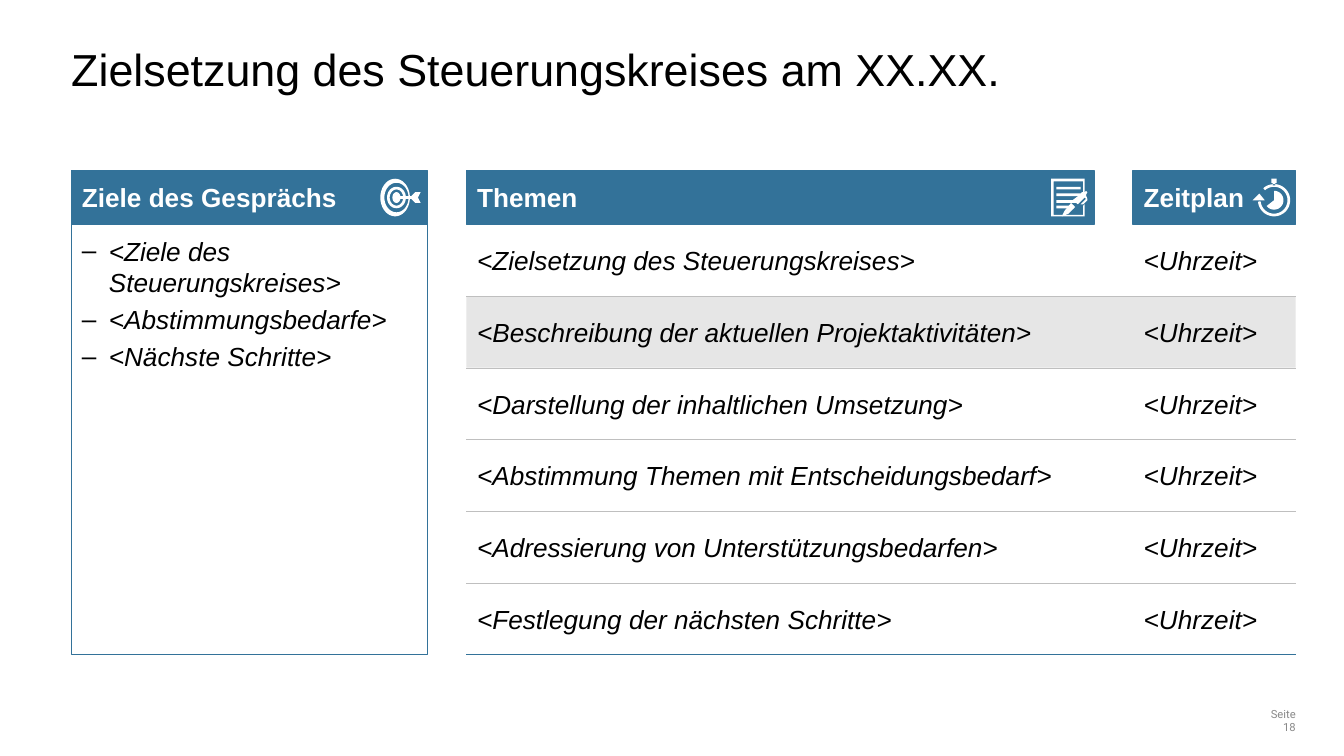
from math import cos, radians, sin

from pptx import Presentation
from pptx.dml.color import RGBColor
from pptx.enum.shapes import MSO_CONNECTOR, MSO_SHAPE
from pptx.enum.text import MSO_ANCHOR, PP_ALIGN
from pptx.oxml.xmlchemy import OxmlElement
from pptx.util import Inches, Pt

BLUE, WHITE, BLACK = "337299", "FFFFFF", "000000"
GREY, BAND, RULE = "898989", "E6E6E6", "BFBFBF"


def paint(target, color):
    target.rgb = RGBColor.from_string(color)


def arc(center, radii, start=0, end=360, steps=48):
    angles = [radians(start + (end - start) * step / steps) for step in range(steps + 1)]
    return [(center[0] + radii[0] * cos(angle), center[1] + radii[1] * sin(angle))
            for angle in angles]


def bar(left, top, width, height):
    right, bottom = left + width, top + height
    return [(left, top), (right, top), (right, bottom), (left, bottom)]


def add_dash(para):
    properties = para._p.get_or_add_pPr()
    properties.set("marL", str(Inches(0.2)))
    properties.set("indent", str(-Inches(0.2)))
    for tag, name, value in (("a:buFont", "typeface", "Arial"), ("a:buChar", "char", "–")):
        element = OxmlElement(tag)
        element.set(name, value)
        properties.append(element)


def write(box, text, size=14, font="Arial", color=BLACK, bold=False, italic=False,
          align=PP_ALIGN.LEFT, anchor=MSO_ANCHOR.MIDDLE, insets=(0.08, 0), dashed=False):
    frame = box.text_frame
    frame.word_wrap = True
    frame.vertical_anchor = anchor
    frame.margin_left = frame.margin_right = Inches(insets[0])
    frame.margin_top = frame.margin_bottom = Inches(insets[1])
    for index, line in enumerate(text.split("\n")):
        para = frame.add_paragraph() if index else frame.paragraphs[0]
        para.alignment = align
        if index:
            para.space_before = Pt(3)
        if dashed:
            add_dash(para)
        span = para.add_run()
        span.text = line
        span.font.size, span.font.name = Pt(size), font
        span.font.bold, span.font.italic = bold, italic
        paint(span.font.color, color)


class Agenda:
    def __init__(self):
        self.deck = Presentation()
        self.deck.slide_width = Inches(10)
        self.deck.slide_height = Inches(10) * 9 // 16
        self.page = self.deck.slides.add_slide(self.deck.slide_layouts[6])

    def label(self, text, *place, **style):
        box = self.page.shapes.add_textbox(*map(Inches, place))
        write(box, text, **style)

    def panel(self, *place, fill=BLUE, line=BLUE, text="", **style):
        box = self.page.shapes.add_shape(MSO_SHAPE.RECTANGLE, *map(Inches, place))
        box.shadow.inherit = False
        box.fill.solid()
        paint(box.fill.fore_color, fill)
        if line:
            paint(box.line.color, line)
            box.line.width = Pt(0.75)
        else:
            box.line.fill.background()
        if text:
            write(box, text, insets=(0.08, 0.08), **style)

    def rule(self, left, right, top, color, width):
        line = self.page.shapes.add_connector(
            MSO_CONNECTOR.STRAIGHT, *map(Inches, (left, top, right, top)))
        paint(line.line.color, color)
        line.line.width = Pt(width)
        line._element.spPr.append(OxmlElement("a:effectLst"))

    def icon(self, *outlines):
        builder = None
        for outline in outlines:
            first, *rest = [(Inches(x), Inches(y)) for x, y in outline]
            if builder is None:
                builder = self.page.shapes.build_freeform(*first, scale=1.0)
            else:
                builder.move_to(*first)
            builder.add_line_segments(rest, close=True)
        shape = builder.convert_to_shape()
        shape.shadow.inherit = False
        shape.fill.solid()
        paint(shape.fill.fore_color, WHITE)
        shape.line.fill.background()


def draw_target(agenda):
    radii = [(0.11, 0.14), (0.09, 0.11), (0.07, 0.08), (0.05, 0.06), (0.03, 0.04)]
    agenda.icon(*[arc((2.94 if index == 0 else 2.95, 1.47), pair)
                  for index, pair in enumerate(radii)])
    agenda.icon([(2.97, 1.46), (3.06, 1.46), (3.09, 1.43), (3.13, 1.43), (3.11, 1.47),
                 (3.13, 1.51), (3.09, 1.51), (3.06, 1.48), (2.97, 1.48)])


def draw_notes(agenda):
    lines = [(1.39, 0.18), (1.44, 0.18), (1.49, 0.15), (1.53, 0.13)]
    agenda.icon(
        [(7.82, 1.33), (8.07, 1.33), (8.07, 1.44), (8.06, 1.46), (8.06, 1.35), (7.84, 1.35),
         (7.84, 1.6), (8.06, 1.6), (8.06, 1.53), (8.07, 1.52), (8.07, 1.61), (7.82, 1.61)],
        *[bar(7.86, top, width, 0.02) for top, width in lines])
    agenda.icon(
        [(7.98, 1.49), (8.02, 1.46), (8.05, 1.43), (8.07, 1.43), (8.08, 1.42), (8.09, 1.43),
         (8.08, 1.45), (8.09, 1.48), (8.09, 1.49), (8.06, 1.52), (8.04, 1.52), (8.08, 1.48),
         (8.07, 1.47), (8.02, 1.52)],
        [(7.97, 1.51), (8, 1.54), (7.95, 1.59), (7.9, 1.61), (7.92, 1.57)])


def draw_stopwatch(agenda):
    center = (9.48, 1.49)
    outer = arc(center, (0.12, 0.12), 175, -132)
    inner = arc(center, (0.1, 0.1), -132, 175)
    crown, stem = bar(9.46, 1.33, 0.04, 0.03), bar(9.47, 1.36, 0.02, 0.02)
    pie = [center] + arc(center, (0.07, 0.07), -90, 142)
    arrow = [(9.32, 1.49), (9.37, 1.44), (9.41, 1.49)]
    agenda.icon(outer + inner, pie, crown, stem)
    agenda.icon(arrow)


def main():
    agenda = Agenda()
    goals, topics, times = (0.53, 2.65), (3.47, 4.67), (8.43, 1.21)
    head_top, body_top, body_height, right = 1.27, 1.67, 3.2, 9.64
    themes = ["<Zielsetzung des Steuerungskreises>",
              "<Beschreibung der aktuellen Projektaktivitäten>",
              "<Darstellung der inhaltlichen Umsetzung>",
              "<Abstimmung Themen mit Entscheidungsbedarf>",
              "<Adressierung von Unterstützungsbedarfen>",
              "<Festlegung der nächsten Schritte>"]
    row_height = body_height / len(themes)

    agenda.label("Seite 18", 9.35, 5.31, 0.29, 0.1, size=6, font="Roboto", color=GREY,
                 align=PP_ALIGN.RIGHT, insets=(0, 0))
    agenda.label("Zielsetzung des Steuerungskreises am XX.XX.", 0.53, 0.31, 9.11, 0.4,
                 size=24, anchor=MSO_ANCHOR.BOTTOM, insets=(0, 0))

    agenda.panel(topics[0], body_top + row_height, right - topics[0], row_height,
                 fill=BAND, line=None)
    for index, theme in enumerate(themes, 1):
        bottom = body_top + index * row_height
        last = index == len(themes)
        agenda.rule(topics[0], right, bottom, BLUE if last else RULE, 0.75 if last else 0.25)
        for text, (left, width) in ((theme, topics), ("<Uhrzeit>", times)):
            agenda.label(text, left, bottom - row_height / 2 - 0.12, width, 0.24, italic=True)

    agenda.panel(goals[0], body_top, goals[1], body_height, fill=WHITE,
                 text="<Ziele des Steuerungskreises>\n<Abstimmungsbedarfe>\n<Nächste Schritte>",
                 italic=True, anchor=MSO_ANCHOR.TOP, dashed=True)
    headings = (("Ziele des Gesprächs", goals), ("Themen", topics), ("Zeitplan", times))
    for text, (left, width) in headings:
        agenda.panel(left, head_top, width, body_top - head_top, text=text, color=WHITE,
                     bold=True)

    draw_target(agenda)
    draw_notes(agenda)
    draw_stopwatch(agenda)
    agenda.deck.save("out.pptx")


if __name__ == "__main__":
    main()
